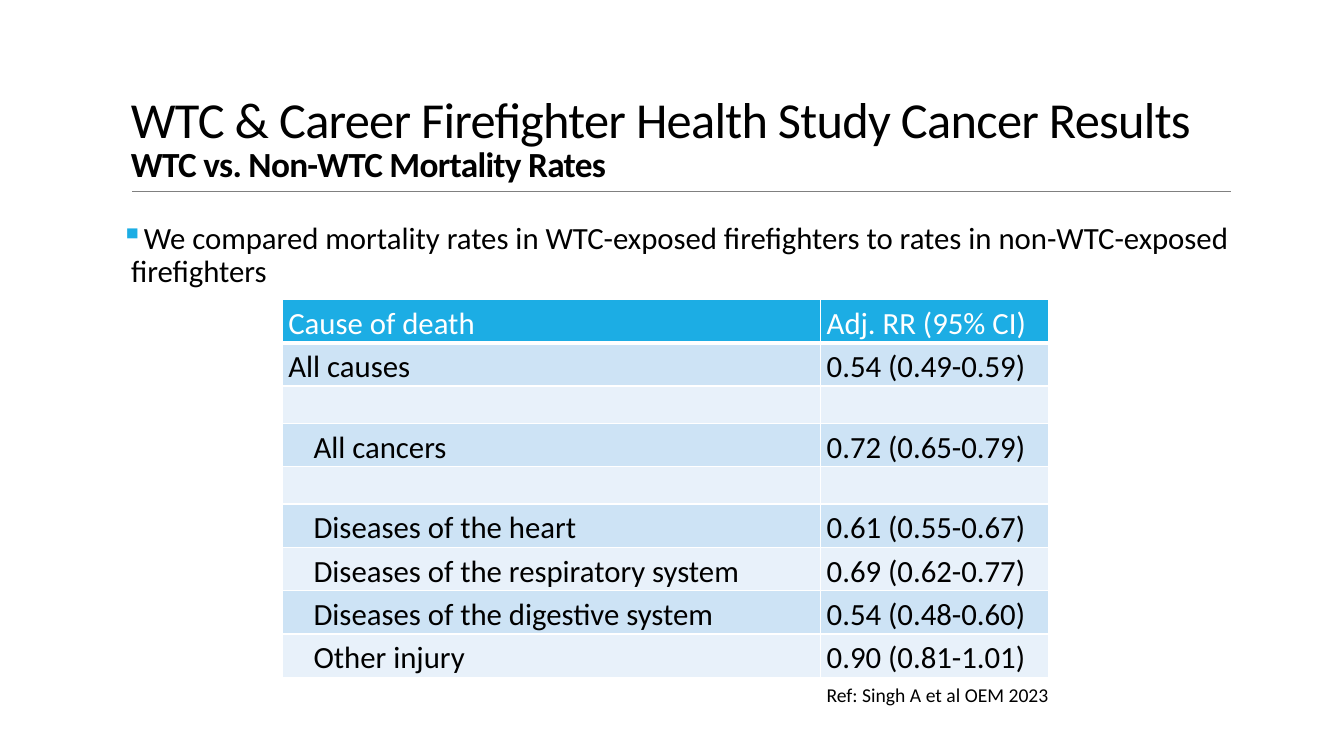
from lxml.etree import SubElement
from pptx import Presentation
from pptx.dml.color import RGBColor
from pptx.enum.shapes import MSO_CONNECTOR
from pptx.enum.text import MSO_ANCHOR, MSO_AUTO_SIZE
from pptx.oxml import parse_xml
from pptx.oxml.ns import nsdecls, qn
from pptx.util import Pt

PX = 9144  # 100 px to the inch
COLORS = {
    "text": "000000", "white": "FFFFFF", "rule": "808080",
    "accent": "1CADE4", "dark": "CDE3F5", "light": "E8F1FA",
}
ROWS = [
    ("Cause of death", "Adj. RR (95% CI)"),
    ("All causes", "0.54 (0.49-0.59)"),
    ("", ""),
    ("All cancers", "0.72 (0.65-0.79)"),
    ("", ""),
    ("Diseases of the heart", "0.61 (0.55-0.67)"),
    ("Diseases of the respiratory system", "0.69 (0.62-0.77)"),
    ("Diseases of the digestive system", "0.54 (0.48-0.60)"),
    ("Other injury", "0.90 (0.81-1.01)"),
]


def rgb(name):
    return RGBColor.from_string(COLORS[name])


class Page:
    def __init__(self, deck, font):
        self.font = font
        self.slide = deck.slides.add_slide(deck.slide_layouts[6])

    def style(self, para, size=None, color="text", lead=None):
        para.font.name = self.font
        para.font.color.rgb = rgb(color)
        if size:
            para.font.size = Pt(size)
        if lead:
            para.line_spacing = lead

    def box(self, left, top, width, height):
        area = [n * PX for n in (left, top, width, height)]
        frame = self.slide.shapes.add_textbox(*area).text_frame
        frame.word_wrap = True
        return frame

    def title(self, head, sub, *area):
        frame = self.box(*area)
        frame.vertical_anchor = MSO_ANCHOR.BOTTOM
        para = frame.paragraphs[0]
        self.style(para, lead=0.85)
        for text, size, bold in ((head, 36, False), (sub, 25.2, True)):
            if para.runs:
                para.add_line_break()
            run = para.add_run()
            run.text = text
            run.font.size = Pt(size)
            run.font.bold = bold
            run.font._element.set("spc", "-50")

    def bullet(self, text, *area):
        frame = self.box(*area)
        frame.margin_left = frame.margin_right = 0
        para = frame.paragraphs[0]
        para.text = text
        self.style(para, 22, lead=0.9)
        para.space_before, para.space_after = Pt(12), Pt(2)
        props = para._p.get_or_add_pPr()
        props.set("marL", str(10 * PX))
        props.set("indent", str(-10 * PX))
        mark = parse_xml(f'<a:buChar {nsdecls("a")} char="▪"/>')
        tint = parse_xml(f'<a:buClr {nsdecls("a")}><a:srgbClr val="{COLORS["accent"]}"/></a:buClr>')
        last = props.find(qn("a:defRPr"))
        last.addprevious(tint)
        last.addprevious(mark)

    def note(self, text, *area):
        frame = self.box(*area)
        frame.auto_size = MSO_AUTO_SIZE.SHAPE_TO_FIT_TEXT
        frame.text = text
        self.style(frame.paragraphs[0], 14)

    def rule(self, left, right, y):
        line = self.slide.shapes.add_connector(
            MSO_CONNECTOR.STRAIGHT, left * PX, y * PX, right * PX, y * PX)
        line.line.color.rgb = rgb("rule")
        line.line.width = Pt(0.5)
        SubElement(line._element.spPr, qn("a:effectLst"))

    def table(self, rows, left, top, cols, tall, short):
        highs = [tall if row[0] else short for row in rows]
        table = self.slide.shapes.add_table(
            len(rows), len(cols), left * PX, top * PX,
            sum(cols) * PX, sum(highs) * PX).table
        table.first_row = table.horz_banding = False
        for col, width in zip(table.columns, cols):
            col.width = width * PX
        for r, (row, high) in enumerate(zip(rows, highs)):
            table.rows[r].height = high * PX
            fill = "accent" if r == 0 else "dark" if r % 2 else "light"
            for c, text in enumerate(row):
                self.cell(table.cell(r, c), text, fill, r == 0, c == 0 and r > 1)

    def cell(self, cell, text, fill, head, inset):
        cell.fill.solid()
        cell.fill.fore_color.rgb = rgb(fill)
        cell.vertical_anchor = MSO_ANCHOR.MIDDLE
        cell.margin_left = cell.margin_right = 6 * PX
        cell.margin_top = cell.margin_bottom = 0
        self.border(cell, head)
        if not text:
            return
        para = cell.text_frame.paragraphs[0]
        para.text = text
        self.style(para, 22, "white" if head else "text", 1.15)
        if inset:
            para.level = 1
            para._p.get_or_add_pPr().set("marL", str(25 * PX))

    def border(self, cell, head):
        """White edges, with a thick one under the header."""
        props = cell._tc.get_or_add_tcPr()
        for i, side in enumerate("LRTB"):
            width = Pt(3 if head and side == "B" else 1)
            props.insert(i, parse_xml(
                f'<a:ln{side} {nsdecls("a")} w="{width}"><a:solidFill>'
                f'<a:srgbClr val="{COLORS["white"]}"/></a:solidFill></a:ln{side}>'))


def main():
    deck = Presentation()
    deck.slide_width, deck.slide_height = 1333 * PX, 750 * PX
    page = Page(deck, "Calibri")
    page.rule(131, 1221, 190)
    page.bullet("We compared mortality rates in WTC-exposed firefighters to "
                "rates in non-WTC-exposed firefighters", 120, 216, 1100, 440)
    page.table(ROWS, 280, 297, (534, 226), 43, 37)
    page.note("Ref: Singh A et al OEM 2023", 810, 673, 386, 34)
    page.title("WTC & Career Firefighter Health Study Cancer Results ",
               "WTC vs. Non-WTC Mortality Rates", 120, 29, 1100, 159)
    deck.save("out.pptx")


if __name__ == "__main__":
    main()
